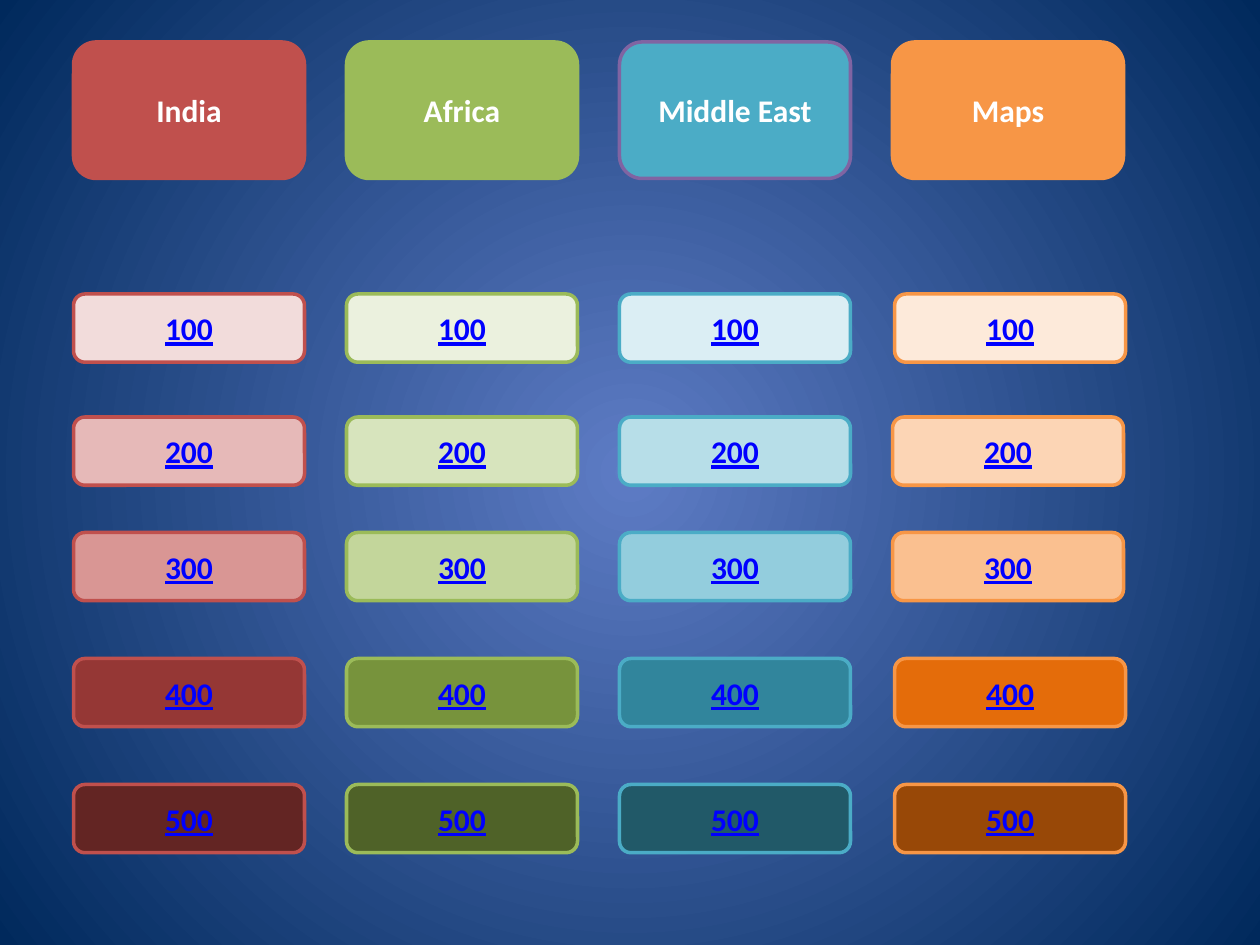
"""Build a quiz board slide with four topics and five point values each."""
from lxml.etree import SubElement
from pptx import Presentation
from pptx.dml.color import RGBColor
from pptx.enum.shapes import MSO_SHAPE
from pptx.enum.text import MSO_ANCHOR, PP_ALIGN
from pptx.oxml.ns import qn
from pptx.util import Pt

COLORS = {
    "glow": "5E7CC5", "edge": "00295C", "white": "FFFFFF", "link": "0000FF",
    "red": "C0504D", "green": "9BBB59", "teal": "4BACC6",
    "orange": "F79646", "purple": "8064A2",
}
TOPICS = [
    ("India", "red", "red", ["F2DCDB", "E6B9B8", "D99694", "953735", "632523"]),
    ("Africa", "green", "green", ["EBF1DE", "D7E4BD", "C3D69B", "77933C", "4F6228"]),
    ("Middle East", "teal", "purple", ["DBEEF4", "B7DEE8", "93CDDD", "31859C", "215968"]),
    ("Maps", "orange", "orange", ["FDEADA", "FCD5B5", "FAC090", "E46C0A", "984807"]),
]
ROW_TOPS = [168, 238.3, 304.3, 376.3, 448.3]
LEFT, COLUMN_STEP, WIDTH = 42, 156, 132
HEADER_TOP, HEADER_HEIGHT, TILE_HEIGHT = 24, 78, 39
NUDGED_TILES = {("Maps", 100), ("Maps", 400), ("Maps", 500)}
NUDGE = 1.2


def rgb(name):
    return RGBColor.from_string(COLORS[name])


def set_radial_background(s, center, edge):
    fill = s.background.fill
    fill.gradient()
    for stop, name in zip(fill.gradient_stops, (center, edge)):
        stop.color.rgb = rgb(name)
    grad = s.element.find(".//" + qn("a:gradFill"))
    grad.remove(grad.find(qn("a:lin")))
    radial = SubElement(grad, qn("a:path"), path="circle")
    SubElement(radial, qn("a:fillToRect"), l="50000", t="50000", r="50000", b="50000")


def add_box(s, x, y, height, text, fill, line, font_color, underline=False):
    sp = s.shapes.add_shape(MSO_SHAPE.ROUNDED_RECTANGLE, Pt(x), Pt(y), Pt(WIDTH), Pt(height))
    sp.shadow.inherit = False
    sp.fill.solid()
    sp.fill.fore_color.rgb = fill
    sp.line.color.rgb = line
    sp.line.width = Pt(2)
    tf = sp.text_frame
    tf.word_wrap = True
    tf.vertical_anchor = MSO_ANCHOR.MIDDLE
    p = tf.paragraphs[0]
    p.alignment = PP_ALIGN.CENTER
    r = p.add_run()
    r.text = text
    r.font.name = "Calibri"
    r.font.size = Pt(18)
    r.font.bold = True
    r.font.underline = underline
    r.font.color.rgb = font_color


def add_header(s, x, topic, fill, line):
    add_box(s, x, HEADER_TOP, HEADER_HEIGHT, topic, rgb(fill), rgb(line), rgb("white"))


def add_tiles(s, x, topic, line, tints):
    for row, (y, tint) in enumerate(zip(ROW_TOPS, tints), start=1):
        value = row * 100
        shift = NUDGE if (topic, value) in NUDGED_TILES else 0
        add_box(s, x + shift, y, TILE_HEIGHT, str(value), RGBColor.from_string(tint),
                rgb(line), rgb("link"), underline=True)


def main():
    prs = Presentation()
    prs.slide_width, prs.slide_height = Pt(720), Pt(540)
    s = prs.slides.add_slide(prs.slide_layouts[6])
    set_radial_background(s, "glow", "edge")
    for column, (topic, color, header_line, tints) in enumerate(TOPICS):
        x = LEFT + column * COLUMN_STEP
        add_header(s, x, topic, color, header_line)
        add_tiles(s, x, topic, color, tints)
    prs.save("out.pptx")


if __name__ == "__main__":
    main()
